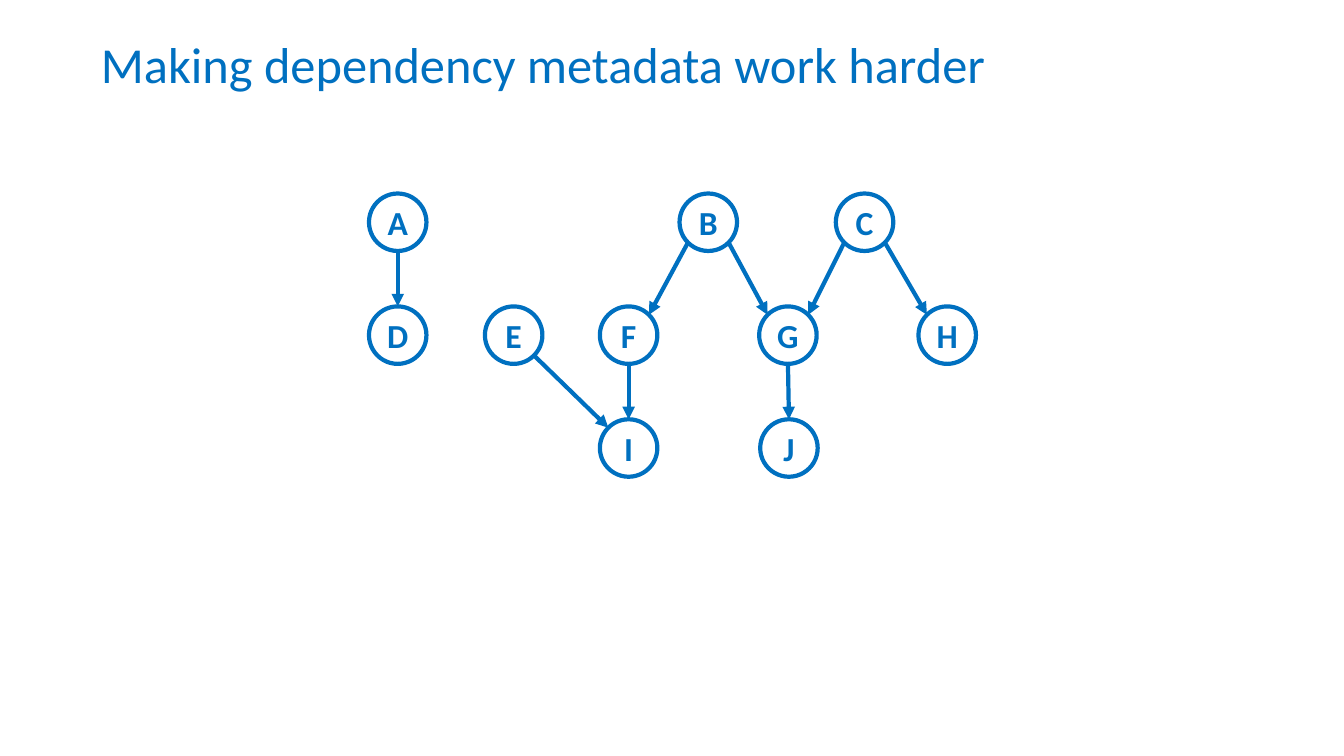
from math import sqrt

from lxml.etree import SubElement
from pptx import Presentation
from pptx.dml.color import RGBColor
from pptx.enum.shapes import MSO_CONNECTOR, MSO_SHAPE
from pptx.enum.text import MSO_ANCHOR, MSO_AUTO_SIZE, PP_ALIGN
from pptx.oxml.ns import qn
from pptx.util import Pt

PX = 9144  # EMU per px, 100 px to the inch
BLUE = RGBColor(0x00, 0x70, 0xC0)
FONT = "Calibri"
LINE_WIDTH = Pt(3)

# Dependency graph, measured from the top left of its box
DIAMETER = 57
ROW_STEP = 112
NODES = {  # name: (left, row)
    "A": (0, 0), "B": (308, 0), "C": (463, 0),
    "D": (0, 1), "E": (115, 1), "F": (229, 1), "G": (387, 1), "H": (545, 1),
    "I": (229, 2), "J": (388, 2),
}
DEPENDENCIES = ["AD", "BF", "BG", "CG", "CH", "EI", "FI", "GJ"]


def px(*lengths):
    return [round(length * PX) for length in lengths]


def style_font(font, size, bold=False):
    font.name, font.size, font.bold = FONT, Pt(size), bold
    font.color.rgb = BLUE


def add_title(slide, text, left, top, width, height):
    title = slide.shapes.title
    title.left, title.top, title.width, title.height = px(left, top, width, height)
    frame = title.text_frame
    frame.text = text
    frame.word_wrap = True
    frame.auto_size = MSO_AUTO_SIZE.NONE
    frame.vertical_anchor = MSO_ANCHOR.TOP
    paragraph = frame.paragraphs[0]
    paragraph.alignment = PP_ALIGN.LEFT
    paragraph.line_spacing = 0.9
    paragraph.space_before = Pt(10)
    style_font(paragraph.font, 36)


def add_node(shapes, name, left, top):
    node = shapes.add_shape(MSO_SHAPE.OVAL, *px(left, top, DIAMETER, DIAMETER))
    node.shadow.inherit = False
    node.fill.background()
    node.line.color.rgb = BLUE
    node.line.width = LINE_WIDTH
    frame = node.text_frame
    frame.margin_left = frame.margin_right = 0
    frame.margin_top = frame.margin_bottom = 0
    frame.vertical_anchor = MSO_ANCHOR.MIDDLE
    frame.text = name
    paragraph = frame.paragraphs[0]
    paragraph.alignment = PP_ALIGN.CENTER
    style_font(paragraph.font, 24, bold=True)


def add_arrow(shapes, start, end):
    """Join two circle centres, from lower rim to upper rim."""
    (start_x, start_y), (end_x, end_y) = start, end
    radius = DIAMETER / 2
    run = end_x - start_x
    if abs(run) < DIAMETER / 2:  # nearly vertical: bottom to top
        shift_x, shift_y = 0, radius
    else:  # slanted: diagonal points of the rims
        shift_y = radius / sqrt(2)
        shift_x = shift_y if run > 0 else -shift_y
    arrow = shapes.add_connector(MSO_CONNECTOR.STRAIGHT, *px(
        start_x + shift_x, start_y + shift_y, end_x - shift_x, end_y - shift_y))
    arrow.line.color.rgb = BLUE
    arrow.line.width = LINE_WIDTH
    SubElement(arrow.line._get_or_add_ln(), qn("a:tailEnd"), type="triangle")
    SubElement(arrow._element.spPr, qn("a:effectLst"))


def add_dependency_graph(slide, left, top):
    shapes = slide.shapes.add_group_shape().shapes
    centres = {}
    for name, (offset, row) in NODES.items():
        node_left, node_top = left + offset, top + row * ROW_STEP
        add_node(shapes, name, node_left, node_top)
        centres[name] = (node_left + DIAMETER / 2, node_top + DIAMETER / 2)
    for source, target in DEPENDENCIES:
        add_arrow(shapes, centres[source], centres[target])


def main():
    presentation = Presentation()
    presentation.slide_width, presentation.slide_height = px(1333, 750)
    title_only = presentation.slide_layouts[5]
    slide = presentation.slides.add_slide(title_only)
    add_title(slide, "Making dependency metadata work harder", 90, 35, 963, 62)
    add_dependency_graph(slide, 366, 192)
    presentation.save("out.pptx")


if __name__ == "__main__":
    main()
